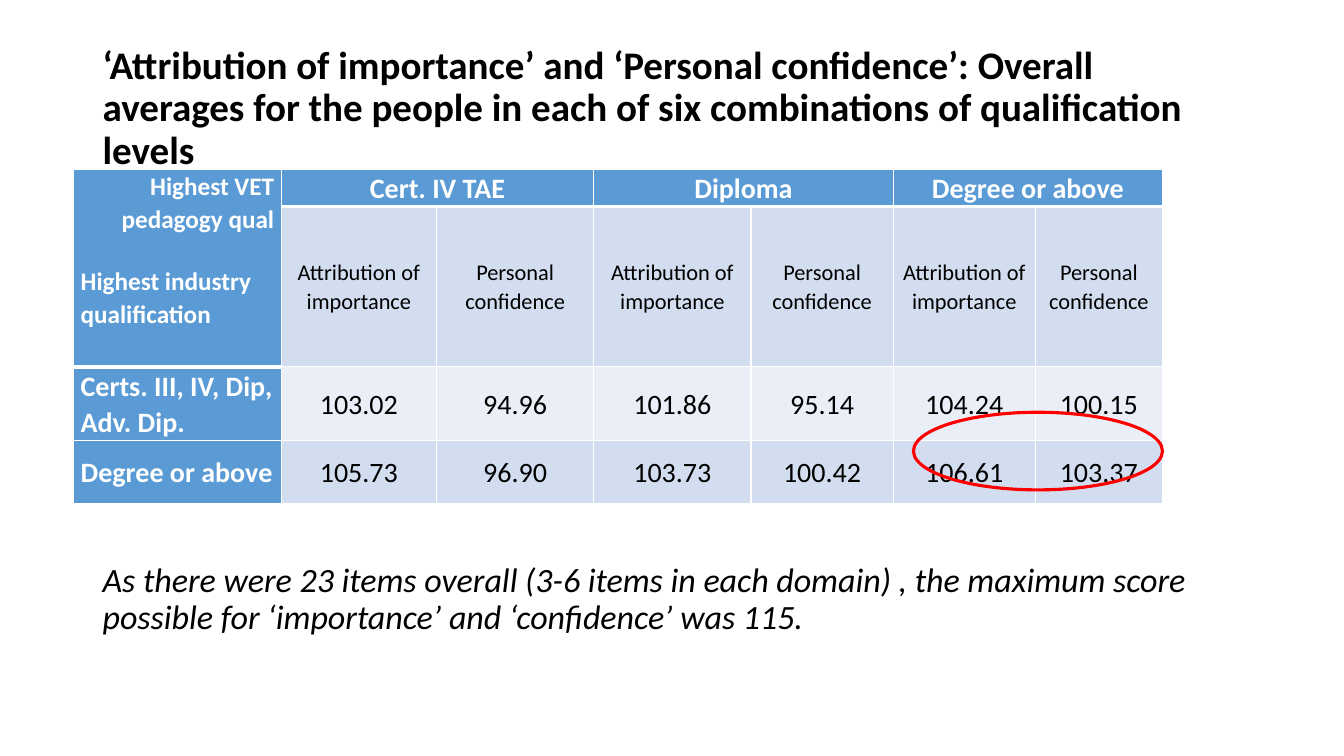
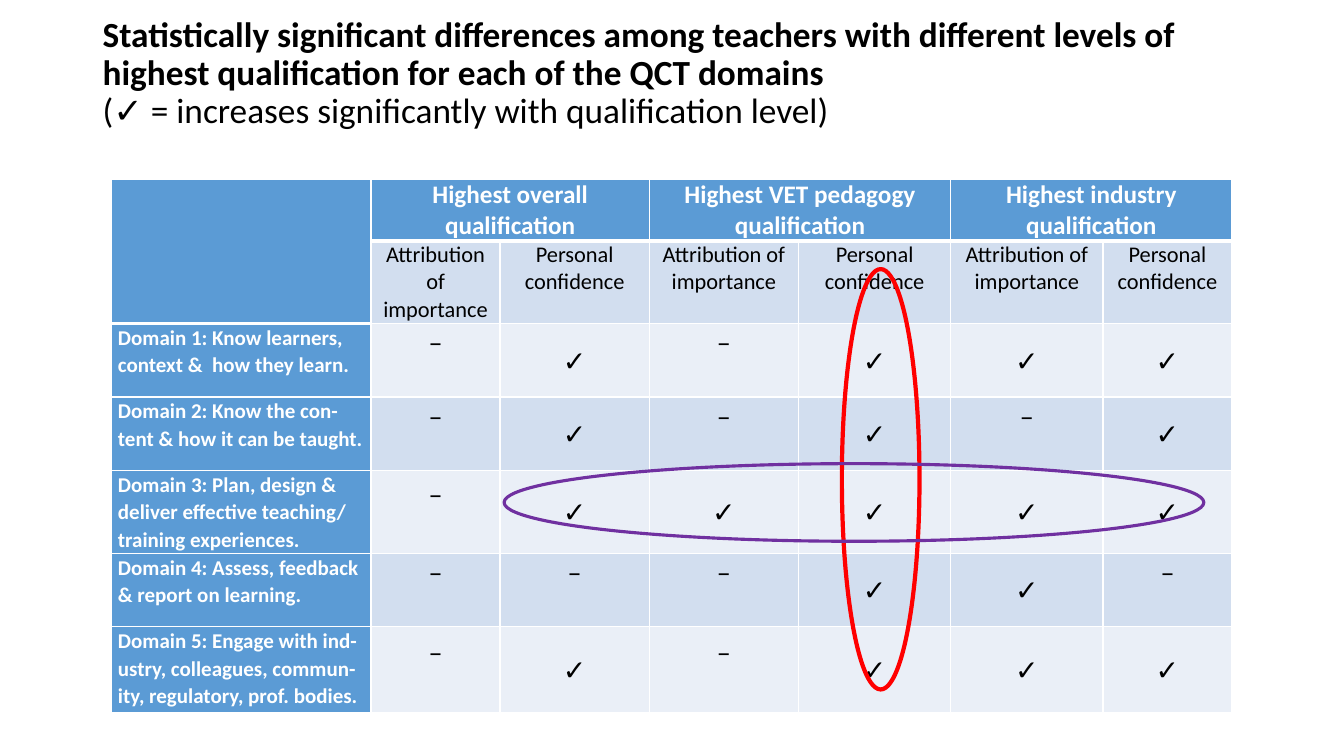
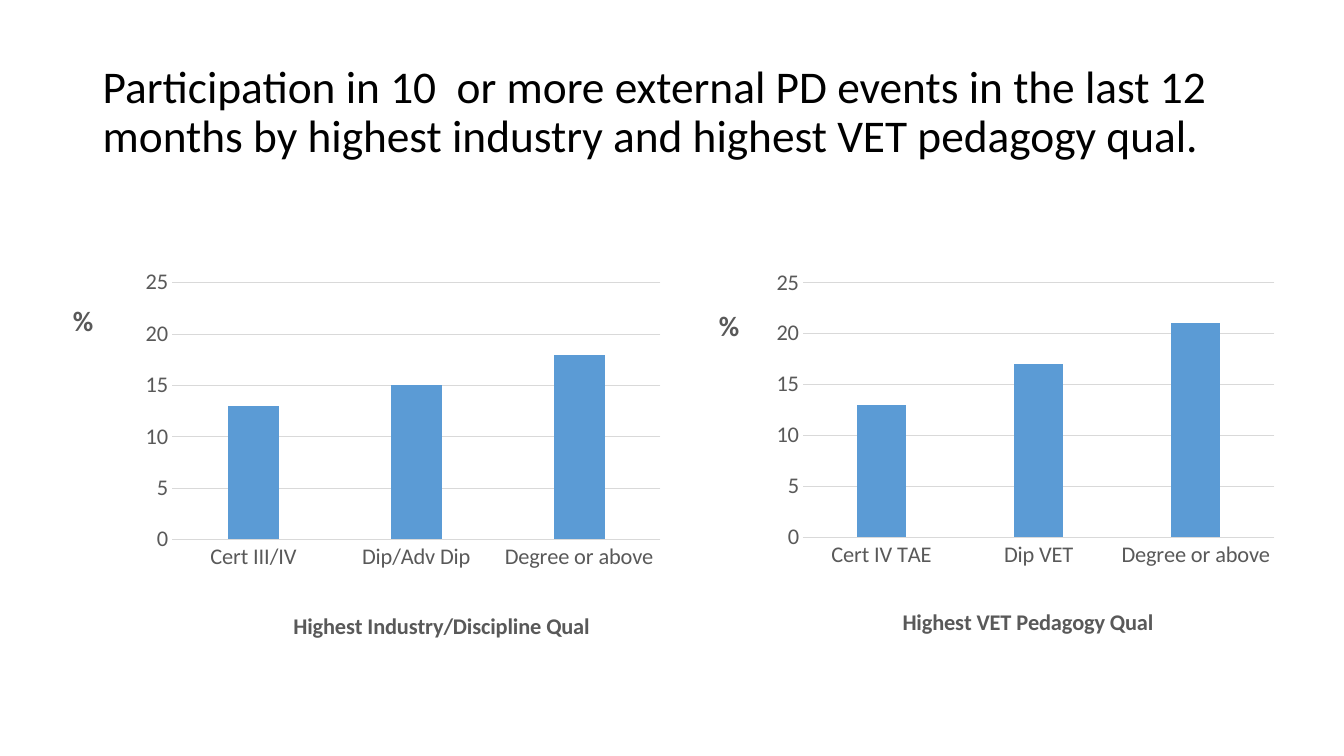
"""Build three slides on teacher qualifications, with two tables and two column charts."""
from pptx import Presentation
from pptx.chart import data as chart_data
from pptx.dml.color import RGBColor
from pptx.enum import chart as chart_enum, shapes, text
from pptx.oxml import ns, xmlchemy
from pptx.util import Inches, Pt

FONT = "Calibri"
BLACK = RGBColor(0x00, 0x00, 0x00)
WHITE = RGBColor(0xFF, 0xFF, 0xFF)
BLUE = RGBColor(0x5B, 0x9B, 0xD5)
BAND_DARK = RGBColor(0xD2, 0xDE, 0xEF)
BAND_LIGHT = RGBColor(0xEA, 0xEF, 0xF7)
GREY = RGBColor(0x59, 0x59, 0x59)
GRID = RGBColor(0xD9, 0xD9, 0xD9)
RED = RGBColor(0xFF, 0x00, 0x00)
PURPLE = RGBColor(0x70, 0x30, 0xA0)

TOP = text.MSO_ANCHOR.TOP
MIDDLE = text.MSO_ANCHOR.MIDDLE
LEFT = text.PP_ALIGN.LEFT
CENTER = text.PP_ALIGN.CENTER
RIGHT = text.PP_ALIGN.RIGHT

MEASURES = ["Attribution of importance", "Personal confidence"] * 3
YES, NO = "✓", "–"


def style_font(font, size, color=BLACK, bold=False, italic=False):
    font.name = FONT
    font.size = Pt(size)
    font.color.rgb = color
    font.bold = bold
    font.italic = italic


def add_text(slide, top, height, paragraphs, size):
    box = slide.shapes.add_textbox(Inches(0.92), Inches(top), Inches(11.5), Inches(height))
    frame = box.text_frame
    frame.word_wrap = True
    frame.vertical_anchor = MIDDLE
    frame.text = "\n".join(wording for wording, bold, italic in paragraphs)
    for paragraph, (wording, bold, italic) in zip(frame.paragraphs, paragraphs):
        paragraph.line_spacing = 0.9
        style_font(paragraph.runs[0].font, size, BLACK, bold, italic)


def add_ring(slide, left, top, width, height, color, weight):
    ring = slide.shapes.add_shape(
        shapes.MSO_SHAPE.OVAL, Inches(left), Inches(top), Inches(width), Inches(height))
    ring.shadow.inherit = False
    ring.fill.background()
    ring.line.color.rgb = color
    ring.line.width = Pt(weight)


def add_border(cell, side, weight):
    properties = cell._tc.get_or_add_tcPr()
    line = xmlchemy.OxmlElement(f"a:ln{side}")
    line.set("w", str(Pt(weight)))
    fill = xmlchemy.OxmlElement("a:solidFill")
    color = xmlchemy.OxmlElement("a:srgbClr")
    color.set("val", str(WHITE))
    fill.append(color)
    line.append(fill)
    properties.append(line)


def paint_cell(cell, row, column):
    below_header = 1 if column == 0 else 0
    weights = {"L": 1, "R": 1,
               "T": 3 if row == below_header + 1 else 1,
               "B": 3 if row <= below_header else 1}
    for side, weight in weights.items():
        add_border(cell, side, weight)
    cell.fill.solid()
    if row == 0 or column == 0:
        cell.fill.fore_color.rgb = BLUE
    else:
        cell.fill.fore_color.rgb = BAND_DARK if row % 2 else BAND_LIGHT
    cell.margin_left = cell.margin_right = Inches(0.07)
    cell.margin_top = cell.margin_bottom = 0


def write_cell(cell, wording, size, alignment, anchor, spacing, heading):
    cell.text_frame.text = wording
    cell.vertical_anchor = anchor
    for paragraph in cell.text_frame.paragraphs:
        paragraph.alignment = alignment
        paragraph.line_spacing = spacing
        for run in paragraph.runs:
            style_font(run.font, size, WHITE if heading else BLACK, heading)


def add_table(slide, left, top, widths, heights, groups, body, group_size,
              label_size, anchor, header_spacing):
    frame = slide.shapes.add_table(
        len(heights), len(widths), Inches(left), Inches(top),
        Inches(sum(widths)), Inches(sum(heights)))
    table = frame.table
    table.first_row = table.horz_banding = False
    for column, width in zip(table.columns, widths):
        column.width = Inches(width)
    for row, height in zip(table.rows, heights):
        row.height = Inches(height)
    for row in range(len(heights)):
        for column in range(len(widths)):
            paint_cell(table.cell(row, column), row, column)

    table.cell(0, 0).merge(table.cell(1, 0))
    for index, group in enumerate(groups):
        column = 1 + 2 * index
        table.cell(0, column).merge(table.cell(0, column + 1))
        write_cell(table.cell(0, column), group, group_size, CENTER, anchor, header_spacing, True)
    for column, measure in enumerate(MEASURES, 1):
        write_cell(table.cell(1, column), measure, 16, CENTER, anchor, header_spacing, False)
    for row, (label, *values) in enumerate(body, 2):
        write_cell(table.cell(row, 0), label, label_size, LEFT, anchor, 1.07, True)
        for column, value in enumerate(values, 1):
            cell = table.cell(row, column)
            write_cell(cell, value, 20, CENTER, MIDDLE, 1.07, False)
            if value == NO:
                cell.margin_bottom = Inches(0.36)
    return table


def place(parent, position, index, inner=False):
    layout = parent.find(ns.qn("c:layout"))
    if layout is None:
        layout = xmlchemy.OxmlElement("c:layout")
        parent.insert(index, layout)
    manual = xmlchemy.OxmlElement("c:manualLayout")
    settings = [("layoutTarget", "inner")] if inner else []
    settings += [("xMode", "edge"), ("yMode", "edge"), *zip("xywh", position)]
    for name, value in settings:
        setting = xmlchemy.OxmlElement(f"c:{name}")
        setting.set("val", str(value))
        manual.append(setting)
    layout.append(manual)


def style_axis(axis, title, title_size, title_position):
    axis.major_tick_mark = axis.minor_tick_mark = chart_enum.XL_TICK_MARK.NONE
    style_font(axis.tick_labels.font, 16, GREY)
    frame = axis.axis_title.text_frame
    frame.text = title
    style_font(frame.paragraphs[0].runs[0].font, title_size, GREY, True)
    element = axis.axis_title._element
    element.find(".//" + ns.qn("a:bodyPr")).set("rot", "0")
    place(element, title_position, 1)


def add_column_chart(slide, box, categories, values, title, title_position,
                     percent_position, plot_position):
    data = chart_data.CategoryChartData()
    data.categories = categories
    data.add_series("Series 1", values)
    frame = slide.shapes.add_chart(
        chart_enum.XL_CHART_TYPE.COLUMN_CLUSTERED, *map(Inches, box), data)
    chart = frame.chart
    chart.has_legend = chart.has_title = False
    style_font(chart.font, 10)

    plot = chart.plots[0]
    plot.vary_by_categories = False
    plot.gap_width = 219
    plot.overlap = -27
    fill = plot.series[0].format.fill
    fill.solid()
    fill.fore_color.rgb = BLUE

    style_axis(chart.category_axis, title, 16, title_position)
    style_axis(chart.value_axis, "%", 20, percent_position)
    chart.value_axis.minimum_scale = 0
    chart.value_axis.maximum_scale = 25
    chart.value_axis.major_unit = 5
    chart.value_axis.format.line.fill.background()
    for line in (chart.category_axis.format.line, chart.value_axis.major_gridlines.format.line):
        line.color.rgb = GRID
        line.width = Pt(0.75)
    place(chart._chartSpace.find(".//" + ns.qn("c:plotArea")), plot_position, 0, True)


def build_averages(slide):
    add_text(slide, 0.4, 1.37, [(
        "‘Attribution of importance’ and ‘Personal confidence’: Overall averages for the "
        "people in each of six combinations of qualification levels", True, False)], 27.9)
    add_text(slide, 5.54, 0.82, [(
        "As there were 23 items overall (3-6 items in each domain) , the maximum score "
        "possible for ‘importance’ and ‘confidence’ was 115.", False, True)], 24.3)
    body = [
        ("Certs. III, IV, Dip, Adv. Dip.",
         "103.02", "94.96", "101.86", "95.14", "104.24", "100.15"),
        ("Degree or above", "105.73", "96.90", "103.73", "100.42", "106.61", "103.37"),
    ]
    table = add_table(
        slide, 0.73, 1.68, [2.06, 1.54, 1.56, 1.56, 1.41, 1.41, 1.26],
        [0.37, 1.59, 0.73, 0.63], ["Cert. IV TAE", "Diploma", "Degree or above"],
        body, 20, 20, MIDDLE, 1.07)
    corner = table.cell(0, 0)
    write_cell(corner, "Highest VET\npedagogy qual\nHighest industry qualification",
               18, RIGHT, TOP, 1.07, True)
    industry = corner.text_frame.paragraphs[2]
    industry.alignment = LEFT
    industry.space_before = Pt(21)
    add_ring(slide, 9.06, 4.09, 2.47, 0.77, RED, 2.25)


def build_differences(slide):
    add_text(slide, 0.17, 1.13, [
        ("Statistically significant differences among teachers with different levels of "
         "highest qualification for each of the QCT domains", True, False),
        ("(✓ = increases significantly with qualification level)", False, False)], 25.2)
    body = [
        ("Domain 1: Know learners, context &  how they learn.", NO, YES, NO, YES, YES, YES),
        ("Domain 2: Know the con- tent & how it can be taught.", NO, YES, NO, YES, NO, YES),
        ("Domain 3: Plan, design & deliver effective teaching/\ntraining experiences.",
         NO, YES, YES, YES, YES, YES),
        ("Domain 4: Assess, feedback & report on learning.", NO, NO, NO, YES, YES, NO),
        ("Domain 5: Engage with ind-ustry, colleagues, commun- ity, regulatory, prof. bodies.",
         NO, YES, NO, YES, YES, YES),
    ]
    add_table(
        slide, 1.1, 1.78, [2.58, 1.28, 1.48, 1.48, 1.51, 1.51, 1.28],
        [0.61, 0.82, 0.73, 0.73, 0.82, 0.73, 0.85],
        ["Highest overall\nqualification", "Highest VET pedagogy qualification",
         "Highest industry qualification"], body, 18, 15, TOP, 1.0)
    add_ring(slide, 8.35, 2.67, 0.77, 4.17, RED, 3)
    add_ring(slide, 5, 4.6, 6.94, 0.77, PURPLE, 2.25)


def build_participation(slide):
    add_text(slide, 0.4, 1.45, [(
        "Participation in 10  or more external PD events in the last 12 months by highest "
        "industry and highest VET pedagogy qual.", False, False)], 32.4)
    add_column_chart(
        slide, (0.35, 2, 6.46, 4.47), ["Cert III/IV", "Dip/Adv Dip", "Degree or above"],
        (13, 15, 18), "Highest Industry/Discipline Qual",
        (0.39, 0.9), (0.05, 0.21), (0.21, 0.18, 0.75, 0.57))
    add_column_chart(
        slide, (6.51, 2.11, 6.32, 4.35), ["Cert IV TAE", "Dip VET", "Degree or above"],
        (13, 17, 21), "Highest VET Pedagogy Qual",
        (0.38, 0.89), (0.09, 0.2), (0.23, 0.16, 0.74, 0.58))


def main():
    presentation = Presentation()
    presentation.slide_width = Inches(13.33)
    presentation.slide_height = Inches(7.5)
    for build in (build_averages, build_differences, build_participation):
        build(presentation.slides.add_slide(presentation.slide_layouts[6]))
    presentation.save("out.pptx")


if __name__ == "__main__":
    main()
